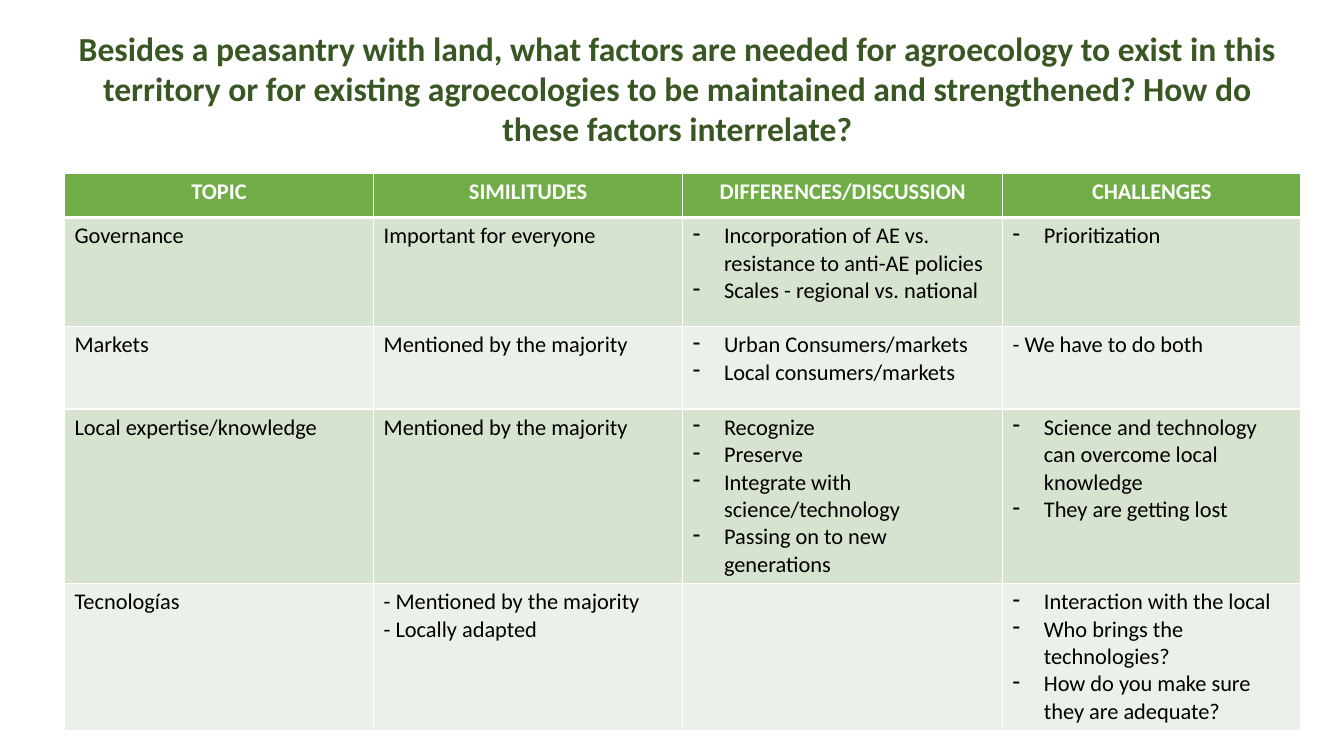
import pptx
import pptx.dml.color
import pptx.enum.text
import pptx.oxml
import pptx.oxml.ns
import pptx.util

COLORS = {
    "title": "385723",
    "header": "70AD47",
    "odd_row": "D5E3CF",
    "even_row": "EBF1E9",
    "text": "000000",
    "white": "FFFFFF",
}
WIDTH, HEIGHT = 13.33, 7.5
ALIGN = pptx.enum.text.PP_ALIGN

TITLE = (
    "Besides a peasantry with land, what factors are needed for agroecology to exist "
    "in this territory or for existing agroecologies to be maintained and strengthened? "
    "How do these factors interrelate?"
)
HEADERS = ["TOPIC", "SIMILITUDES", "DIFFERENCES/DISCUSSION", "CHALLENGES"]
TOPICS = [
    ["Governance", "Important for everyone",
     ["Incorporation of AE vs. resistance to anti-AE policies",
      "Scales - regional vs. national"],
     ["Prioritization"]],
    ["Markets", "Mentioned by the majority",
     ["Urban Consumers/markets", "Local consumers/markets"],
     "- We have to do both"],
    ["Local expertise/knowledge", "Mentioned by the majority",
     ["Recognize", "Preserve", "Integrate with science/technology",
      "Passing on to new generations"],
     ["Science and technology can overcome local knowledge",
      "They are getting lost"]],
    ["Tecnologías", "- Mentioned by the majority\n- Locally adapted", "",
     ["Interaction with the local", "Who brings the technologies?",
      "How do you make sure they are adequate?"]],
]
COLUMN_SHARES = [0.23, 0.23, 0.238, 0.222]
ROW_SHARES = [0.0587, 0.144, 0.1093, 0.2267, 0.1907]


def rgb(name):
    return pptx.dml.color.RGBColor.from_string(COLORS[name])


def write(frame, text, size=16, color="text", bold=False, align=ALIGN.LEFT,
          font="Calibri", bullet=None):
    for index, line in enumerate(text.split("\n")):
        paragraph = frame.paragraphs[0] if index == 0 else frame.add_paragraph()
        paragraph.alignment = align
        paragraph.font.size = pptx.util.Pt(size)
        run = paragraph.add_run()
        run.text = line
        run.font.name = font
        run.font.size = pptx.util.Pt(size)
        run.font.bold = bold
        run.font.color.rgb = rgb(color)
        if bullet:
            indent = pptx.util.Inches(0.31)
            properties = paragraph._p.get_or_add_pPr()
            properties.set("marL", str(indent))
            properties.set("indent", str(-indent))
            mark = pptx.oxml.parse_xml(
                f'<a:buChar {pptx.oxml.ns.nsdecls("a")} char="{bullet}"/>')
            properties.append(mark)


class Deck:
    def __init__(self):
        self.presentation = pptx.Presentation()
        self.presentation.slide_width = pptx.util.Inches(WIDTH)
        self.presentation.slide_height = pptx.util.Inches(HEIGHT)
        self.slide = self.presentation.slides.add_slide(
            self.presentation.slide_layouts[5])

    def across(self, share):
        return round(self.presentation.slide_width * share)

    def down(self, share):
        return round(self.presentation.slide_height * share)

    def title(self, text, left, top, width, height):
        shape = self.slide.shapes.title
        shape.left, shape.top = self.across(left), self.down(top)
        shape.width, shape.height = self.across(width), self.down(height)
        frame = shape.text_frame
        frame.word_wrap = True
        frame.auto_size = pptx.enum.text.MSO_AUTO_SIZE.NONE
        frame.vertical_anchor = pptx.enum.text.MSO_ANCHOR.TOP
        write(frame, text, size=24, color="title", bold=True, align=ALIGN.CENTER)

    def border(self, cell, **widths):
        properties = cell._tc.get_or_add_tcPr()
        for side, points in widths.items():
            properties.append(pptx.oxml.parse_xml(
                f'<a:ln{side} {pptx.oxml.ns.nsdecls("a")} w="{pptx.util.Pt(points)}">'
                f'<a:solidFill><a:srgbClr val="{COLORS["white"]}"/></a:solidFill>'
                f'</a:ln{side}>'))

    def cell(self, cell, content, row):
        self.border(cell, L=1, R=1, T=3 if row == 1 else 1, B=3 if row == 0 else 1)
        fill = "header" if row == 0 else "odd_row" if row % 2 else "even_row"
        cell.fill.solid()
        cell.fill.fore_color.rgb = rgb(fill)
        if row == 0:
            write(cell.text_frame, content, color="white", bold=True,
                  align=ALIGN.CENTER)
        elif isinstance(content, list):
            write(cell.text_frame, "\n".join(content), bullet="-")
        elif content:
            write(cell.text_frame, content)

    def table(self, rows, left, top, column_shares, row_shares):
        table = self.slide.shapes.add_table(
            len(rows), len(column_shares), self.across(left), self.down(top),
            self.across(sum(column_shares)), self.down(sum(row_shares))).table
        for column, share in zip(table.columns, column_shares):
            column.width = self.across(share)
        for row, share in zip(table.rows, row_shares):
            row.height = self.down(share)
        for row_index, contents in enumerate(rows):
            for column_index, content in enumerate(contents):
                self.cell(table.cell(row_index, column_index), content, row_index)


def main():
    deck = Deck()
    deck.title(TITLE, 0.04, 0.03, 0.928, 0.175)
    deck.table([HEADERS] + TOPICS, 0.048, 0.229, COLUMN_SHARES, ROW_SHARES)
    deck.presentation.save("out.pptx")


if __name__ == "__main__":
    main()
